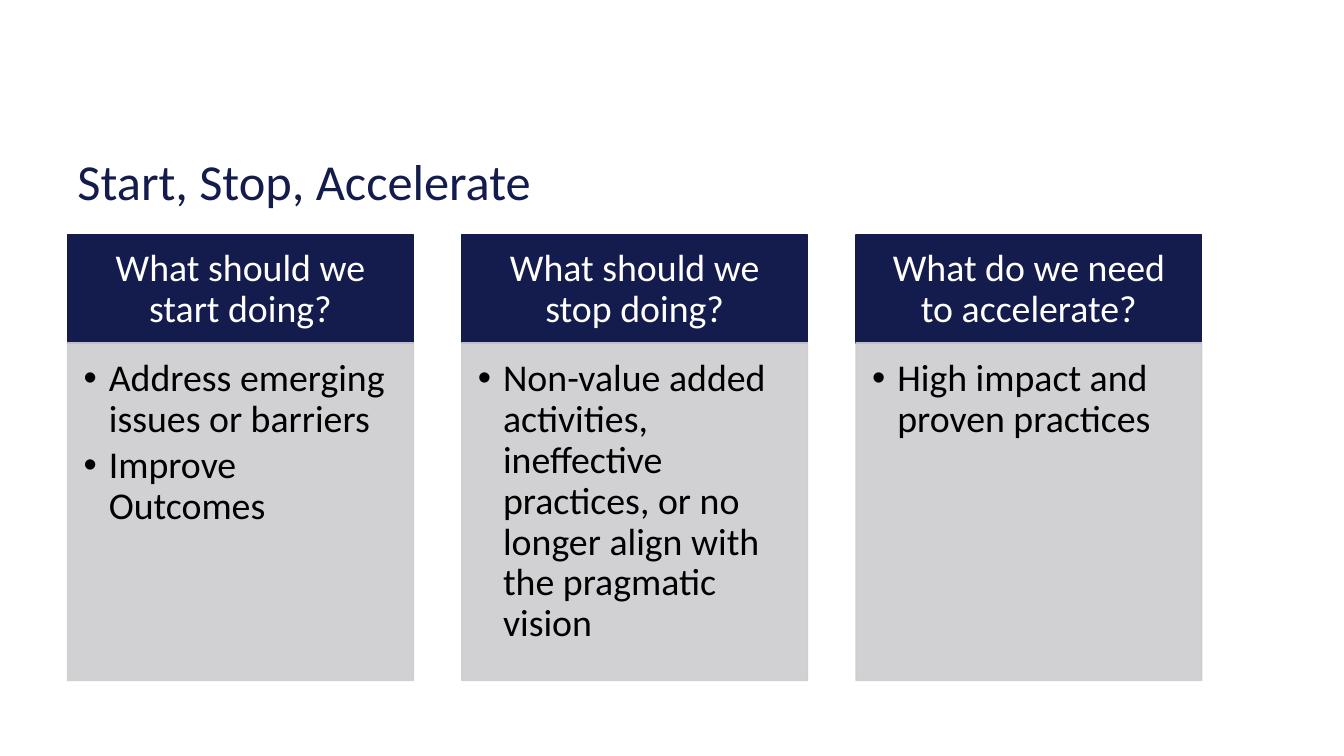
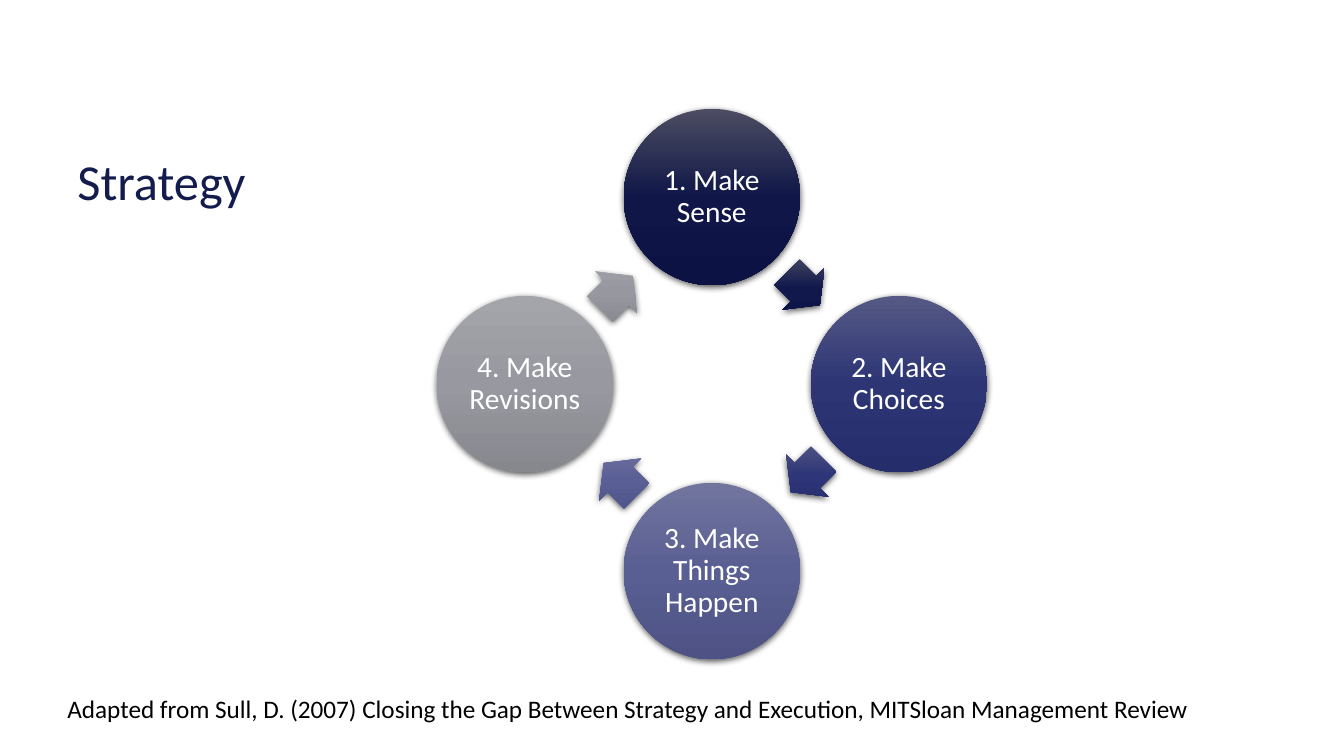
"""Build two strategy slides: a three-column list and a four-step cycle."""
from math import cos, radians, sin

from lxml.etree import SubElement
from pptx import Presentation
from pptx.dml.color import RGBColor
from pptx.enum.shapes import MSO_SHAPE
from pptx.enum.text import MSO_ANCHOR, PP_ALIGN
from pptx.oxml import parse_xml
from pptx.oxml.ns import nsdecls, qn
from pptx.util import Inches, Pt

COLORS = {"navy": "141B4D", "grey": "CCCDD0", "white": "FFFFFF", "black": "000000"}
FONT = "Calibri"


def write_text(shape, lines, size, color, insets=(0.1, 0.05, 0.1, 0.05), align=PP_ALIGN.LEFT,
               anchor=MSO_ANCHOR.TOP, spacing=0.9, bullets=False):
    frame = shape.text_frame
    frame.word_wrap = True
    frame.vertical_anchor = anchor
    frame.margin_left, frame.margin_top, frame.margin_right, frame.margin_bottom = map(Inches, insets)
    frame.text = "\n".join(lines)
    for paragraph in frame.paragraphs:
        if bullets:
            properties = paragraph._p.get_or_add_pPr()
            properties.set("marL", str(Inches(0.25)))
            properties.set("indent", str(-Inches(0.25)))
            SubElement(properties, qn("a:buFont"), typeface="Arial")
            SubElement(properties, qn("a:buChar"), char="•")
            paragraph.space_after = Pt(4)
        paragraph.alignment = align
        paragraph.line_spacing = spacing
        paragraph.font.name = FONT
        paragraph.font.size = Pt(size)
        paragraph.font.color.rgb = RGBColor.from_string(COLORS[color])


def add_gradient_shape(page, kind, center_x, center_y, width, height, stops):
    shape = page.shapes.add_shape(kind, Inches(center_x - width / 2), Inches(center_y - height / 2),
                                  Inches(width), Inches(height))
    shape.line.fill.background()
    shape.fill.solid()
    shape.shadow.inherit = False
    properties = shape._element.spPr
    marks = "".join(f'<a:gs pos="{position}"><a:srgbClr val="{color}"/></a:gs>'
                    for position, color in zip((0, 50000, 100000), stops))
    gradient = parse_xml(f'<a:gradFill rotWithShape="0" {nsdecls("a")}><a:gsLst>{marks}</a:gsLst>'
                         '<a:lin ang="5400000" scaled="0"/></a:gradFill>')
    properties.replace(properties.find(qn("a:solidFill")), gradient)
    properties.find(qn("a:effectLst")).append(parse_xml(
        f'<a:outerShdw {nsdecls("a")} blurRad="{Pt(4.5)}" dist="{Pt(1.5)}" dir="5400000" '
        f'rotWithShape="0"><a:srgbClr val="{COLORS["black"]}"><a:alpha val="63000"/>'
        '</a:srgbClr></a:outerShdw>'))
    return shape


deck = Presentation()
deck.slide_width, deck.slide_height = Inches(13.33), Inches(7.5)
pages = []
for title in ("Start, Stop, Accelerate", "Strategy"):
    page = deck.slides.add_slide(deck.slide_layouts[6])
    box = page.shapes.add_textbox(Inches(0.67), Inches(0.96), Inches(12), Inches(1.17))
    write_text(box, [title], 36, "navy", anchor=MSO_ANCHOR.BOTTOM, spacing=0.8)
    pages.append(page)
columns_page, cycle_page = pages

columns = [
    ("What should we start doing?", ["Address emerging issues or barriers", "Improve Outcomes"]),
    ("What should we stop doing?", ["Non-value added activities, ineffective practices, "
                                    "or no longer align with the pragmatic vision"]),
    ("What do we need to accelerate?", ["High impact and proven practices"]),
]
for index, (question, answers) in enumerate(columns):
    left = Inches(0.67 + 3.91 * index)
    header = columns_page.shapes.add_shape(MSO_SHAPE.RECTANGLE, left, Inches(2.33), Inches(3.43), Inches(1.08))
    body = columns_page.shapes.add_shape(MSO_SHAPE.RECTANGLE, left, Inches(3.4), Inches(3.43), Inches(3.35))
    for panel, color in ((header, "navy"), (body, "grey")):
        panel.shadow.inherit = False
        panel.fill.solid()
        panel.line.width = Pt(1)
        for paint in (panel.fill.fore_color, panel.line.color):
            paint.rgb = RGBColor.from_string(COLORS[color])
    for tint in body._element.spPr.iter(qn("a:srgbClr")):
        SubElement(tint, qn("a:alpha"), val="90000")
    write_text(header, [question], 27, "white", (0.21, 0.12, 0.21, 0.12), PP_ALIGN.CENTER, MSO_ANCHOR.MIDDLE)
    write_text(body, answers, 27, "black", (0.16, 0.16, 0.21, 0.24), bullets=True)

steps = [
    ("1. Make Sense", ("4C4D62", "101748", "0C1243"), ("4C4E65", "10184C", "0C1346")),
    ("2. Make Choices", ("555984", "2D3575", "252D6B"), ("565985", "2E3578", "262D6D")),
    ("3. Make Things Happen", ("71759E", "5A5F93", "4E5285"), ("71749F", "5A5F95", "4D5286")),
    ("4. Make Revisions", ("A4A5AA", "9899A0", "87888E"), ("A3A3AA", "9797A0", "86868F")),
]
radius = 1.855
centers = [(7.06 + radius * sin(radians(90 * index)), 3.81 - radius * cos(radians(90 * index)))
           for index in range(len(steps))]
for index, (label, circle_stops, arrow_stops) in enumerate(steps):
    x, y = centers[index]
    next_x, next_y = centers[(index + 1) % len(steps)]
    circle = add_gradient_shape(cycle_page, MSO_SHAPE.OVAL, x, y, 1.75, 1.75, circle_stops)
    write_text(circle, [label], 21, "white", (0.03,) * 4, PP_ALIGN.CENTER, MSO_ANCHOR.MIDDLE)
    arrow = add_gradient_shape(cycle_page, MSO_SHAPE.RIGHT_ARROW, x + 0.49 * (next_x - x),
                               y + 0.49 * (next_y - y), 0.46, 0.59, arrow_stops)
    arrow.adjustments[0], arrow.adjustments[1] = 0.6, 0.5
    arrow.rotation = 45 + 90 * index

citation = cycle_page.shapes.add_textbox(Inches(0.57), Inches(6.83), Inches(11.6), Inches(0.4))
write_text(citation, ["Adapted from Sull, D. (2007) Closing the Gap Between Strategy and Execution, "
                      "MITSloan Management Review"], 18, "black", spacing=1.0)

deck.save("out.pptx")
